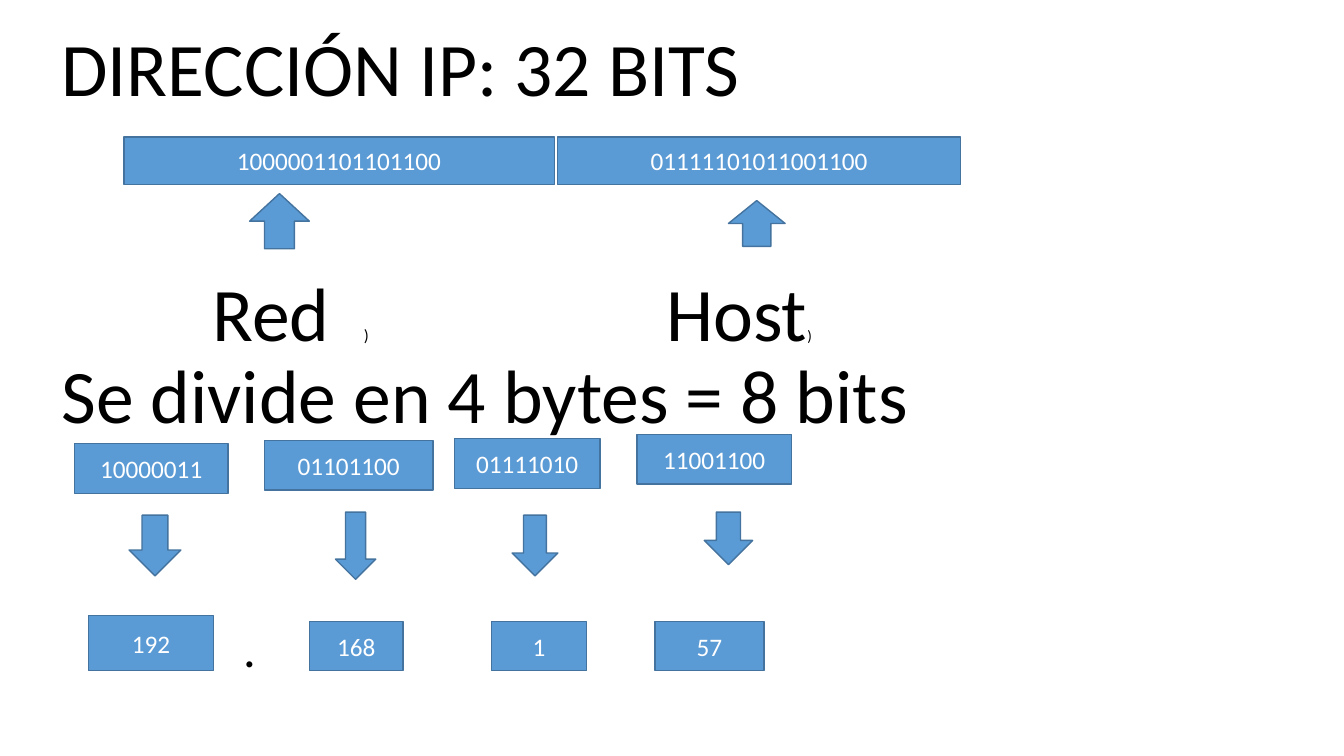
"""Build a slide that splits an IP address into its network, host and bytes."""
from dataclasses import dataclass

from lxml.etree import SubElement
from pptx import Presentation
from pptx.dml.color import RGBColor as Color
from pptx.enum.shapes import MSO_SHAPE as Shape
from pptx.enum.text import MSO_ANCHOR as Anchor, MSO_AUTO_SIZE as Auto, PP_ALIGN as Align
from pptx.oxml.ns import qn
from pptx.util import Pt


@dataclass(frozen=True)
class Theme:
    face: str = "Calibri"
    ink: str = "000000"
    pale: str = "FFFFFF"
    fill: str = "5B9BD5"
    edge: str = "43739E"
    head: float = 54
    dot: float = 36
    label: float = 18
    mark: float = 11.7
    small: float = 10.8


class Board:
    def __init__(self, deck, theme):
        self.theme = theme
        self.slide = deck.slides.add_slide(deck.slide_layouts[5])

    def style(self, run, size, color):
        run.font.name = self.theme.face
        run.font.size = Pt(size)
        run.font.color.rgb = Color.from_string(color)

    def title(self, left, top, width, height, foot, lines):
        box = self.slide.shapes.title
        box.left, box.top, box.width, box.height = map(Pt, (left, top, width, height))
        frame = box.text_frame
        frame.auto_size = Auto.NONE
        frame.word_wrap = True
        frame.vertical_anchor = Anchor.BOTTOM
        frame.margin_top, frame.margin_bottom = Pt(0), Pt(foot)
        for index, (gap, stops, parts) in enumerate(lines):
            para = frame.add_paragraph() if index else frame.paragraphs[0]
            if stops:
                tabs = SubElement(para._p.get_or_add_pPr(), qn("a:tabLst"))
                for stop in stops:
                    SubElement(tabs, qn("a:tab"), pos=str(Pt(stop)), algn="l")
            para.alignment = Align.LEFT
            para.line_spacing = 0.9
            para.space_before = Pt(gap)
            for text, size in parts:
                run = para.add_run()
                run.text = text
                self.style(run, size, self.theme.ink)

    def shape(self, kind, left, top, width, height):
        item = self.slide.shapes.add_shape(kind, *map(Pt, (left, top, width, height)))
        item.shadow.inherit = False
        item.fill.solid()
        item.fill.fore_color.rgb = Color.from_string(self.theme.fill)
        item.line.color.rgb = Color.from_string(self.theme.edge)
        item.line.width = Pt(1)
        return item

    def block(self, text, *place):
        frame = self.shape(Shape.RECTANGLE, *place).text_frame
        frame.text = text
        frame.word_wrap = True
        frame.vertical_anchor = Anchor.MIDDLE
        para = frame.paragraphs[0]
        para.alignment = Align.CENTER
        self.style(para.runs[0], self.theme.label, self.theme.pale)

    def text(self, text, size, *place):
        frame = self.slide.shapes.add_textbox(*map(Pt, place)).text_frame
        frame.text = text
        frame.word_wrap = True
        self.style(frame.paragraphs[0].runs[0], size, self.theme.ink)


def main():
    deck = Presentation()
    deck.slide_width, deck.slide_height = Pt(960), Pt(540)
    theme = Theme()
    board = Board(deck, theme)

    board.title(36.7, 28, 803.5, 348, 62, [
        (0, (), [("DIRECCIÓN IP: 32 BITS", theme.head)]),
        (117, (108, 216, 432), [("\tRed\t", theme.head), (")", theme.mark),
                                ("\tHost", theme.head), (")", theme.small)]),
        (0, (), [("Se divide en 4 bytes = 8 bits", theme.head)]),
    ])

    halves = [("1000001101101100", 88.5, 307.5), ("01111101011001100", 398.2, 288)]
    for bits, left, width in halves:
        board.block(bits, left, 98, width, 33.8)
    for place in [(178.3, 138.3, 42.7, 39.4), (520.3, 143.3, 40.5, 32.7)]:
        board.shape(Shape.UP_ARROW, *place)

    octets = [
        ("10000011", (53.2, 317), (92.2, 368, 37, 43.4), "192", (63.2, 439.7, 89.5, 39.3), 109.8),
        ("01101100", (188.8, 314.7), (239.6, 365.8, 28.8, 48), "168", (221, 444, 67, 35), 120.6),
        ("01111010", (324.5, 313.3), (365.8, 368, 32.7, 43.4), "1", (351, 444, 68, 35), 104),
        ("11001100", (455, 310.3), (503, 365.8, 34.6, 37.5), "57", (467.8, 444, 78, 35), 110.4),
    ]
    for bits, place, arrow, value, cell, width in octets:
        board.block(bits, *place, width, 35.5)
        board.shape(Shape.DOWN_ARROW, *arrow)
        board.block(value, *cell)
    board.text(".", theme.dot, 167, 437, 34, 51)

    deck.save("out.pptx")


if __name__ == "__main__":
    main()
